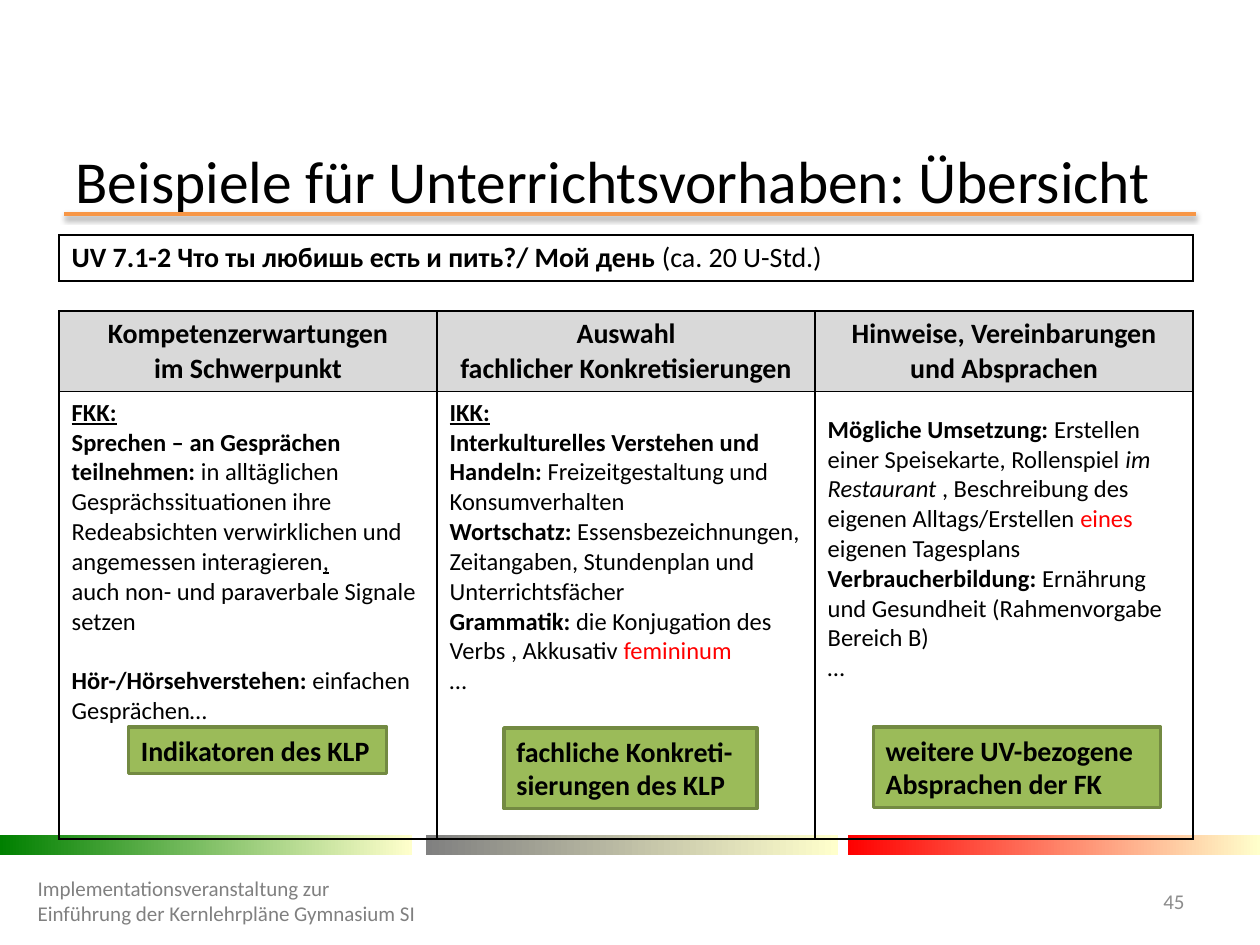
from dataclasses import dataclass

from lxml.etree import SubElement
from pptx import Presentation
from pptx.dml.color import RGBColor
from pptx.enum.shapes import MSO_CONNECTOR, MSO_SHAPE
from pptx.enum.text import MSO_ANCHOR, PP_ALIGN
from pptx.oxml.ns import qn
from pptx.util import Pt


@dataclass(frozen=True)
class Theme:
    font: str = "Calibri"
    title_size: float = 34
    heading_size: float = 16
    body_size: float = 14
    footer_size: float = 12
    gap_size: float = 8
    black: str = "000000"
    red: str = "FF0000"
    gray: str = "808080"
    number_gray: str = "8C8C8C"
    header: str = "D9D9D9"
    rule: str = "F79646"
    tag: str = "9BBB59"
    tag_line: str = "738A42"
    cream: str = "FFFFCC"
    green: str = "008000"


THEME = Theme()


@dataclass(frozen=True)
class Span:
    text: str
    bold: bool = False
    italic: bool = False
    underline: bool = False
    color: str = THEME.black


@dataclass(frozen=True)
class Line:
    spans: tuple
    space_before: float = 0


@dataclass(frozen=True)
class Box:
    text: str
    left: float
    top: float
    width: float
    height: float


def labelled(label: str, text: str, *more: Span, space_before: float = 0) -> Line:
    return Line((Span(label, bold=True), Span(text), *more), space_before)


def plain(text: str) -> Line:
    return Line((Span(text),))


def heading(text: str) -> Line:
    return Line((Span(text, bold=True, underline=True),))


HEADERS = (
    "Kompetenzerwartungen\vim Schwerpunkt",
    "Auswahl\vfachlicher Konkretisierungen",
    "Hinweise, Vereinbarungen und Absprachen",
)
BODIES = (
    (
        heading("FKK:"),
        labelled(
            "Sprechen – an Gesprächen teilnehmen:",
            " in alltäglichen Gesprächssituationen ihre Redeabsichten "
            "verwirklichen und angemessen interagieren",
            Span(",", underline=True),
        ),
        plain("auch non- und paraverbale Signale setzen"),
        labelled("Hör-/Hörsehverstehen:", " einfachen Gesprächen…", space_before=17),
    ),
    (
        heading("IKK:"),
        labelled("Interkulturelles Verstehen und Handeln:",
                 " Freizeitgestaltung und Konsumverhalten"),
        labelled("Wortschatz:",
                 " Essensbezeichnungen, Zeitangaben, Stundenplan und Unterrichtsfächer"),
        labelled("Grammatik:", " die Konjugation des Verbs , Akkusativ ",
                 Span("femininum", color=THEME.red)),
        plain("…"),
    ),
    (
        labelled(
            "Mögliche Umsetzung:",
            " Erstellen einer Speisekarte, Rollenspiel ",
            Span("im Restaurant ", italic=True),
            Span(", Beschreibung des eigenen Alltags/Erstellen "),
            Span("eines", color=THEME.red),
            Span(" eigenen Tagesplans"),
        ),
        labelled("Verbraucherbildung:",
                 " Ernährung und Gesundheit (Rahmenvorgabe Bereich B)"),
        plain("…"),
    ),
)
BODY_TOP_MARGINS = (3.6, 3.6, 13.3)
TOPIC = labelled("UV 7.1-2 Что ты любишь есть и пить?/ Мой день ", "(ca. 20 U-Std.)")
TAGS = (
    Box("Indikatoren des KLP", 73.4, 415.5, 147.6, 26.6),
    Box("fachliche Konkreti-sierungen des KLP", 288, 416, 144.7, 46),
    Box("weitere UV-bezogene Absprachen der FK", 499, 415.5, 164.2, 46),
)
FOOTER = Box("Implementationsveranstaltung zur Einführung der Kernlehrpläne Gymnasium SI",
             14.4, 500.4, 233.3, 28.8)
SLIDE_NUMBER = Box("45", 638, 500.4, 46, 28.8)
BAND_COLORS = (THEME.green, THEME.gray, THEME.red)
BAND_LEFTS = (0, 243.4, 484.6)
ROW_HEIGHTS = (26.5, 17, 46.2, 255.6)
COLUMN_WIDTH = 216


def write_lines(text_frame, lines: tuple, size: float, align=PP_ALIGN.LEFT) -> None:
    text_frame.word_wrap = True
    for index, line in enumerate(lines):
        paragraph = text_frame.add_paragraph() if index else text_frame.paragraphs[0]
        paragraph.alignment = align
        if line.space_before:
            paragraph.space_before = Pt(line.space_before)
        for span in line.spans:
            first_new = len(paragraph.runs)
            for part_index, part in enumerate(span.text.split("\v")):
                if part_index:
                    paragraph.add_line_break()
                paragraph.add_run().text = part
            for run in paragraph.runs[first_new:]:
                font = run.font
                font.name, font.size = THEME.font, Pt(size)
                font.bold, font.italic, font.underline = span.bold, span.italic, span.underline
                font.color.rgb = RGBColor.from_string(span.color)


def add_rectangle(slide, box: Box):
    shape = slide.shapes.add_shape(MSO_SHAPE.RECTANGLE, Pt(box.left), Pt(box.top),
                                   Pt(box.width), Pt(box.height))
    shape.shadow.inherit = False
    return shape


def add_band(slide, left: float, color: str) -> None:
    shape = add_rectangle(slide, Box("", left, 477.2, 235.4, 11.5))
    shape.line.fill.background()
    shape.fill.gradient()
    shape.fill.gradient_angle = 0
    for stop, stop_color in zip(shape.fill.gradient_stops, (color, THEME.cream)):
        stop.color.rgb = RGBColor.from_string(stop_color)


def add_tag(slide, box: Box) -> None:
    shape = add_rectangle(slide, box)
    shape.fill.solid()
    shape.fill.fore_color.rgb = RGBColor.from_string(THEME.tag)
    shape.line.color.rgb = RGBColor.from_string(THEME.tag_line)
    shape.line.width = Pt(2)
    shape.text_frame.vertical_anchor = MSO_ANCHOR.TOP
    write_lines(shape.text_frame, (Line((Span(box.text, bold=True),)),), THEME.heading_size)


def add_note(slide, box: Box, color: str, align) -> None:
    shape = slide.shapes.add_textbox(Pt(box.left), Pt(box.top), Pt(box.width), Pt(box.height))
    shape.text_frame.vertical_anchor = MSO_ANCHOR.MIDDLE
    write_lines(shape.text_frame, (Line((Span(box.text, color=color),)),),
                THEME.footer_size, align)


def add_rule(slide) -> None:
    rule = slide.shapes.add_connector(MSO_CONNECTOR.STRAIGHT, Pt(36.7), Pt(122.4),
                                      Pt(683.3), Pt(122.4))
    rule.line.color.rgb = RGBColor.from_string(THEME.rule)
    rule.line.width = Pt(2)
    effects = SubElement(rule._element.spPr, qn("a:effectLst"))
    shadow = SubElement(effects, qn("a:outerShdw"), blurRad=str(Pt(3.1)),
                        dist=str(Pt(1.6)), dir="5400000", rotWithShape="0")
    color = SubElement(shadow, qn("a:srgbClr"), val=THEME.black)
    SubElement(color, qn("a:alpha"), val="38000")


def style_cell(cell, fill: str = "", sides: str = "LRTB") -> None:
    properties = cell._tc.get_or_add_tcPr()
    for side in "LRTB":
        border = SubElement(properties, qn(f"a:ln{side}"), w=str(Pt(1)))
        if side in sides:
            solid = SubElement(border, qn("a:solidFill"))
            SubElement(solid, qn("a:srgbClr"), val=THEME.black)
        else:
            SubElement(border, qn("a:noFill"))
    if fill:
        cell.fill.solid()
        cell.fill.fore_color.rgb = RGBColor.from_string(fill)
    else:
        cell.fill.background()


def add_overview(slide) -> None:
    table = slide.shapes.add_table(4, 3, Pt(33.8), Pt(134.2), Pt(3 * COLUMN_WIDTH),
                                   Pt(sum(ROW_HEIGHTS))).table
    table.first_row = table.horz_banding = False
    for row, height in zip(table.rows, ROW_HEIGHTS):
        row.height = Pt(height)
    for index, column in enumerate(table.columns):
        column.width = Pt(COLUMN_WIDTH)
        topic, gap, header, body = (table.cell(row, index) for row in range(4))
        style_cell(topic)
        style_cell(gap, sides="TB")
        SubElement(gap.text_frame.paragraphs[0]._p, qn("a:endParaRPr"),
                   sz=str(int(THEME.gap_size * 100)))
        style_cell(header, THEME.header)
        header.vertical_anchor = MSO_ANCHOR.MIDDLE
        write_lines(header.text_frame, (Line((Span(HEADERS[index], bold=True),)),),
                    THEME.heading_size, PP_ALIGN.CENTER)
        style_cell(body)
        body.margin_top = Pt(BODY_TOP_MARGINS[index])
        write_lines(body.text_frame, BODIES[index], THEME.body_size)
    table.cell(0, 0).merge(table.cell(0, 2))
    table.cell(1, 0).merge(table.cell(1, 1))
    table.cell(0, 0).vertical_anchor = MSO_ANCHOR.MIDDLE
    write_lines(table.cell(0, 0).text_frame, (TOPIC,), THEME.heading_size)


def main() -> None:
    presentation = Presentation()
    presentation.slide_width, presentation.slide_height = Pt(720), Pt(540)
    slide = presentation.slides.add_slide(presentation.slide_layouts[5])
    add_rule(slide)
    for left, color in zip(BAND_LEFTS, BAND_COLORS):
        add_band(slide, left, color)
    title = slide.shapes.title
    title.left, title.top, title.width, title.height = Pt(36), Pt(88.6), Pt(648), Pt(28)
    title.text_frame.vertical_anchor = MSO_ANCHOR.MIDDLE
    write_lines(title.text_frame, (plain("Beispiele für Unterrichtsvorhaben: Übersicht"),),
                THEME.title_size)
    add_note(slide, SLIDE_NUMBER, THEME.number_gray, PP_ALIGN.RIGHT)
    add_note(slide, FOOTER, THEME.gray, PP_ALIGN.LEFT)
    add_overview(slide)
    for tag in TAGS:
        add_tag(slide, tag)
    presentation.save("out.pptx")


if __name__ == "__main__":
    main()
